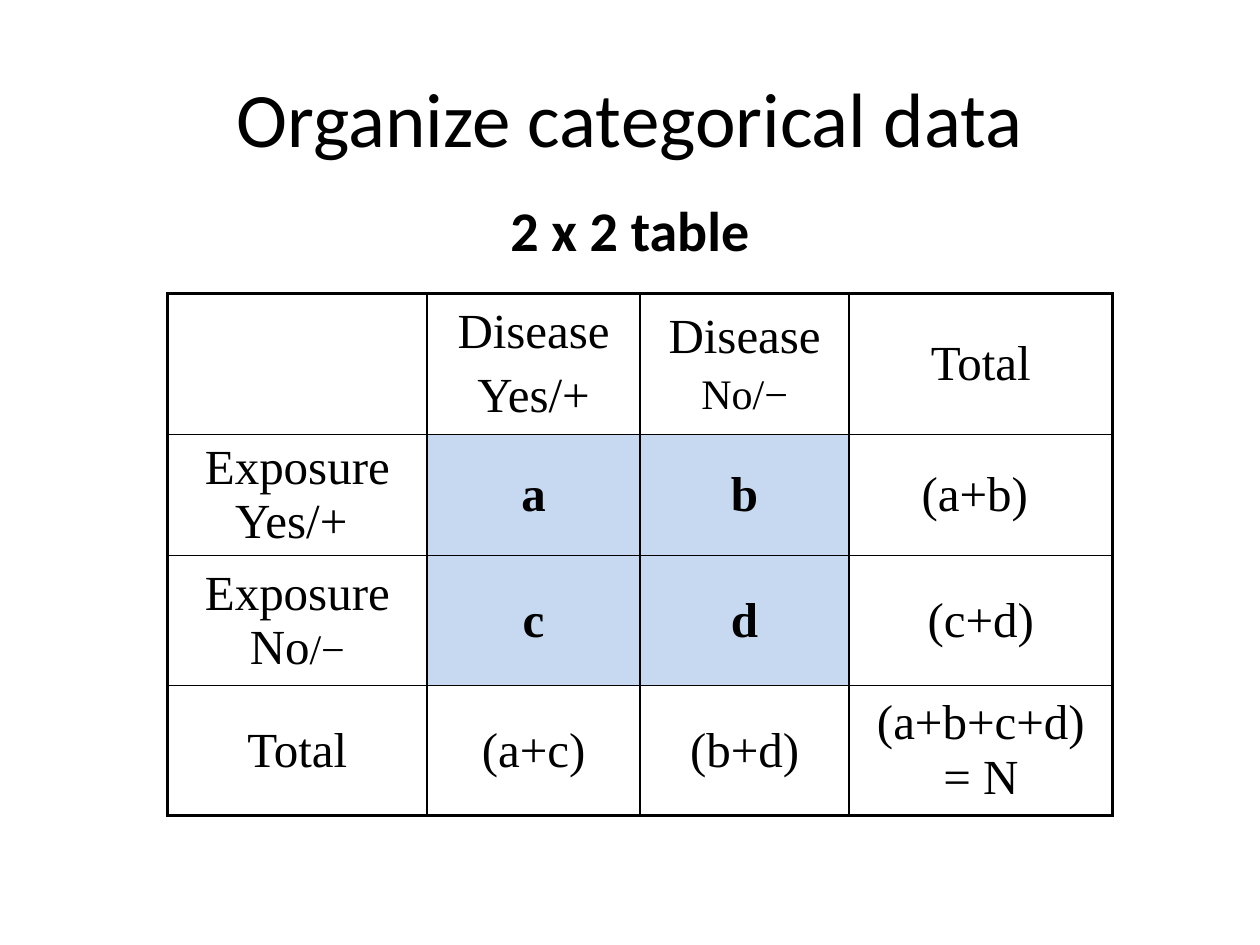
"""Build a slide that shows how a 2 x 2 table organizes categorical data."""
from lxml.etree import SubElement
from pptx import Presentation
from pptx.dml.color import RGBColor
from pptx.enum.text import MSO_ANCHOR, PP_ALIGN
from pptx.oxml.ns import qn
from pptx.util import Inches, Pt

THEME = {
    "ink": "000000", "paper": "FFFFFF", "core": "C6D9F1",
    "head": {"name": "Calibri", "size": Pt(44), "bold": False},
    "sub": {"name": "Calibri", "size": Pt(32), "bold": True},
    "cell": {"name": "Times New Roman", "size": Pt(28), "bold": False},
    "strong": {"name": "Times New Roman", "size": Pt(28), "bold": True},
    "small": {"name": "Times New Roman", "size": Pt(24), "bold": False},
    "thin": Pt(1), "thick": Pt(2.25),
}
TITLE = "Organize categorical data"
LEAD = "2 x 2 table"
ROWS = [
    [[], [[("Disease", "cell")], [("Yes/+", "cell")]],
     [[("Disease", "cell")], [("No/−", "small")]], [[("Total", "cell")]]],
    [[[("Exposure\nYes/+ ", "cell")]], [[("a", "strong")]],
     [[("b", "strong")]], [[("(a+b) ", "cell")]]],
    [[[("Exposure\nNo", "cell"), ("/−", "small")]], [[("c", "strong")]],
     [[("d", "strong")]], [[("(c+d)", "cell")]]],
    [[[("Total", "cell")]], [[("(a+c)", "cell")]],
     [[("(b+d)", "cell")]], [[("(a+b+c+d) = N", "cell")]]],
]
WIDTHS = [2.06, 1.69, 1.66, 2.09]
HEIGHTS = [1.12, 0.73, 1.03, 1.03]


def style(run, role):
    for key, value in THEME[role].items():
        setattr(run.font, key, value)
    run.font.color.rgb = RGBColor.from_string(THEME["ink"])


def write(frame, paras, gap=True):
    for i, parts in enumerate(paras):
        para = frame.paragraphs[0] if i == 0 else frame.add_paragraph()
        para.alignment = PP_ALIGN.CENTER
        if gap:
            space = SubElement(para._p.get_or_add_pPr(), qn("a:spcBef"))
            SubElement(space, qn("a:spcPct"), val="20000")
        for text, role in parts:
            first, *rest = text.split("\n")
            for j, line in enumerate([first, *rest]):
                if j:
                    para.add_line_break()
                run = para.add_run()
                run.text = line
                style(run, role)


def border(cell, edges):
    props = cell._tc.get_or_add_tcPr()
    for side, outer in edges.items():
        width = THEME["thick" if outer else "thin"]
        line = SubElement(props, qn(f"a:ln{side}"), w=str(int(width)))
        fill = SubElement(line, qn("a:solidFill"))
        SubElement(fill, qn("a:srgbClr"), val=THEME["ink"])


def place(shape, left, top, width, height):
    shape.left, shape.top = Inches(left), Inches(top)
    shape.width, shape.height = Inches(width), Inches(height)


def grid(slide):
    last, end = len(ROWS) - 1, len(WIDTHS) - 1
    frame = slide.shapes.add_table(
        len(ROWS), len(WIDTHS), Inches(1.33), Inches(2.33),
        Inches(sum(WIDTHS)), Inches(sum(HEIGHTS)))
    table = frame.table
    table.first_row = table.horz_banding = False
    for col, width in zip(table.columns, WIDTHS):
        col.width = Inches(width)
    for row, height in zip(table.rows, HEIGHTS):
        row.height = Inches(height)
    for r, row in enumerate(ROWS):
        for c, paras in enumerate(row):
            cell = table.cell(r, c)
            cell.vertical_anchor = MSO_ANCHOR.MIDDLE
            border(cell, {"L": c == 0, "R": c == end, "T": r == 0, "B": r == last})
            core = r in (1, 2) and c in (1, 2)
            cell.fill.solid()
            cell.fill.fore_color.rgb = RGBColor.from_string(
                THEME["core" if core else "paper"])
            write(cell.text_frame, paras)


def main():
    deck = Presentation()
    deck.slide_width, deck.slide_height = Inches(10), Inches(7.5)
    slide = deck.slides.add_slide(deck.slide_layouts[1])
    title, body = slide.placeholders
    place(title, 0.5, 0.3, 9, 1.25)
    title.text_frame.vertical_anchor = MSO_ANCHOR.MIDDLE
    write(title.text_frame, [[(TITLE, "head")]], gap=False)
    place(body, 0.5, 1.5, 9, 5.2)
    write(body.text_frame, [[(LEAD, "sub")]])
    props = body.text_frame.paragraphs[0]._p.get_or_add_pPr()
    props.set("marL", str(Inches(0.38)))
    props.set("indent", str(Inches(-0.38)))
    SubElement(props, qn("a:buNone"))
    grid(slide)
    deck.save("out.pptx")


if __name__ == "__main__":
    main()
